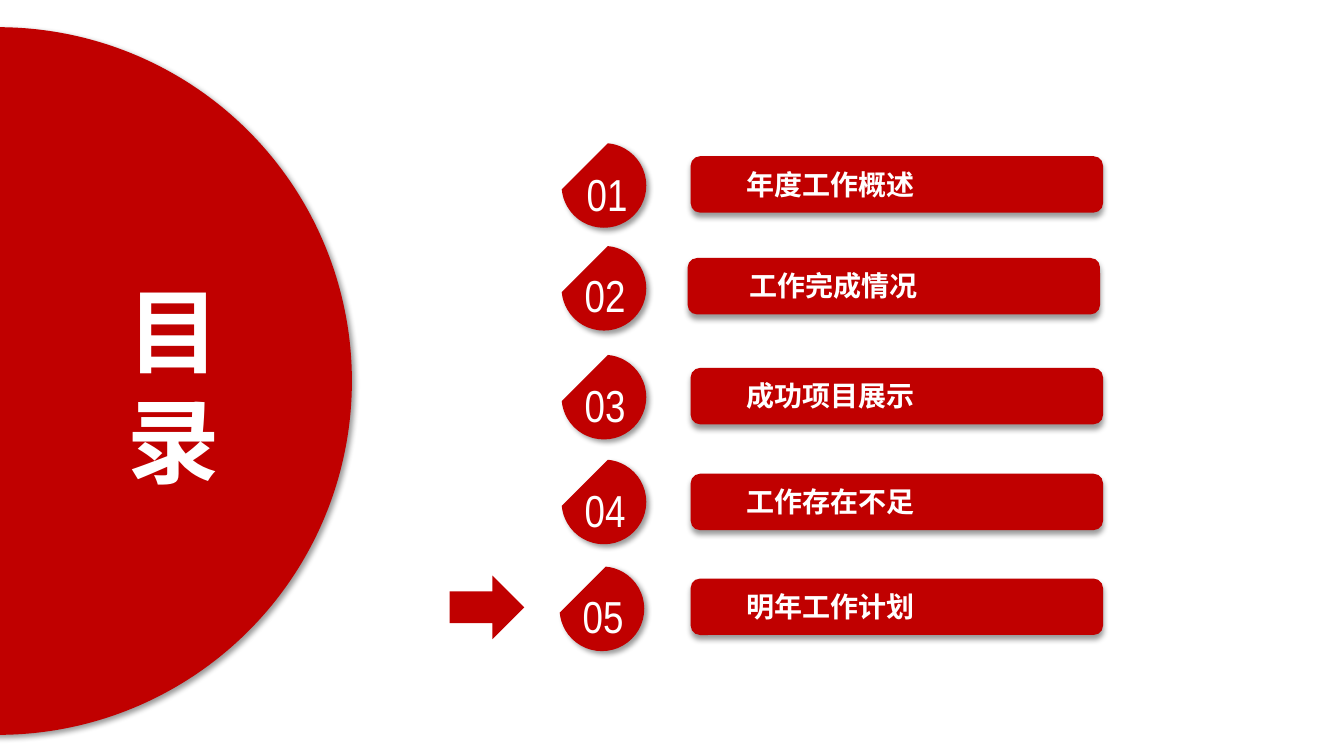
from lxml import etree
from pptx import Presentation
from pptx.dml.color import RGBColor
from pptx.enum.shapes import MSO_SHAPE
from pptx.enum.text import MSO_ANCHOR, MSO_AUTO_SIZE, PP_ALIGN
from pptx.oxml.ns import qn
from pptx.util import Emu, Pt

OVAL = MSO_SHAPE.OVAL
CHORD = MSO_SHAPE.CHORD
PILL = MSO_SHAPE.ROUNDED_RECTANGLE
ARROW = MSO_SHAPE.RIGHT_ARROW
TOP = MSO_ANCHOR.TOP
MIDDLE = MSO_ANCHOR.MIDDLE
FIXED = MSO_AUTO_SIZE.NONE
LEFT = PP_ALIGN.LEFT
CENTER = PP_ALIGN.CENTER

SCALE = 9144
COLORS = {"red": "C00000", "white": "FFFFFF", "shade": "000000"}
HAN = "Noto Sans CJK SC"
NARROW = "Arial Narrow"

ROWS = [
    ("01", "年度工作概述", (557, 142), (572, 160), (685, 155), 727),
    ("02", "工作完成情况", (557, 244), (570, 261), (682, 256), 730),
    ("03", "成功项目展示", (557, 352), (570, 370), (685, 365), 727),
    ("04", "工作存在不足", (557, 456), (570, 474), (685, 470), 727),
    ("05", "明年工作计划", (555, 562), (568, 579), (685, 574), 727),
]


def px(*sizes):
    return [Emu(size * SCALE) for size in sizes]


def color(name):
    return RGBColor.from_string(COLORS[name])


def add_shade(shape, angle):
    props = shape._element.spPr
    effects = props.find(qn("a:effectLst"))
    shade = etree.SubElement(effects, qn("a:outerShdw"), blurRad=str(Pt(4)),
                             dist=str(Pt(3)), dir=str(angle * 60000),
                             algn="ctr", rotWithShape="0")
    tint = etree.SubElement(shade, qn("a:srgbClr"), val=COLORS["shade"])
    etree.SubElement(tint, qn("a:alpha"), val="40000")


def add_form(slide, kind, box, angle=None):
    shape = slide.shapes.add_shape(kind, *px(*box))
    shape.fill.solid()
    shape.fill.fore_color.rgb = color("red")
    shape.line.fill.background()
    shape.shadow.inherit = False
    if angle is not None:
        add_shade(shape, angle)
    return shape


def set_text(shape, text, size, face, bold, align, anchor, pad):
    frame = shape.text_frame
    frame.text = text
    frame.word_wrap = True
    frame.auto_size = FIXED
    frame.vertical_anchor = anchor
    frame.margin_left, frame.margin_top = px(*pad)
    frame.margin_right, frame.margin_bottom = px(*pad)
    for para in frame.paragraphs:
        para.alignment = align
        for run in para.runs:
            font = run.font
            font.size = Pt(size)
            font.bold = bold
            font.color.rgb = color("white")
            font.name = face
            etree.SubElement(run._r.get_or_add_rPr(), qn("a:ea"), typeface=face)


def add_title(slide):
    title = slide.shapes.title
    title.left, title.top, title.width, title.height = px(100, 258, 145, 236)
    set_text(title, "目\n录", 66, HAN, True, CENTER, TOP, (13, 14))
    for para in title.text_frame.paragraphs:
        para.line_spacing = Pt(79)
        para.space_before = Pt(0)
    slide.shapes._spTree.append(title._element)


def add_drop(slide, spot, place, number):
    drop = add_form(slide, CHORD, (*spot, 84, 84), 45)
    drop.adjustments[0] = 275.4 * 0.6
    drop.adjustments[1] = 174.6 * 0.6
    box = slide.shapes.add_textbox(*px(*place, 73, 64))
    set_text(box, number, 32, NARROW, False, LEFT, TOP, (10, 5))


def add_label(slide, spot, left, text):
    add_form(slide, PILL, (*spot, 409, 56), 90)
    box = slide.shapes.add_textbox(*px(left, spot[1] + 4, 290, 47))
    set_text(box, text, 20, HAN, True, LEFT, MIDDLE, (13, 7))


def main():
    deck = Presentation()
    deck.slide_width, deck.slide_height = px(1333, 750)
    slide = deck.slides.add_slide(deck.slide_layouts[5])
    add_form(slide, OVAL, (-353, 27, 702, 702), 45)
    add_title(slide)
    for number, text, spot, place, pill, left in ROWS:
        add_drop(slide, spot, place, number)
        add_label(slide, pill, left, text)
    add_form(slide, ARROW, (446, 571, 74, 63))
    deck.save("out.pptx")


if __name__ == "__main__":
    main()
